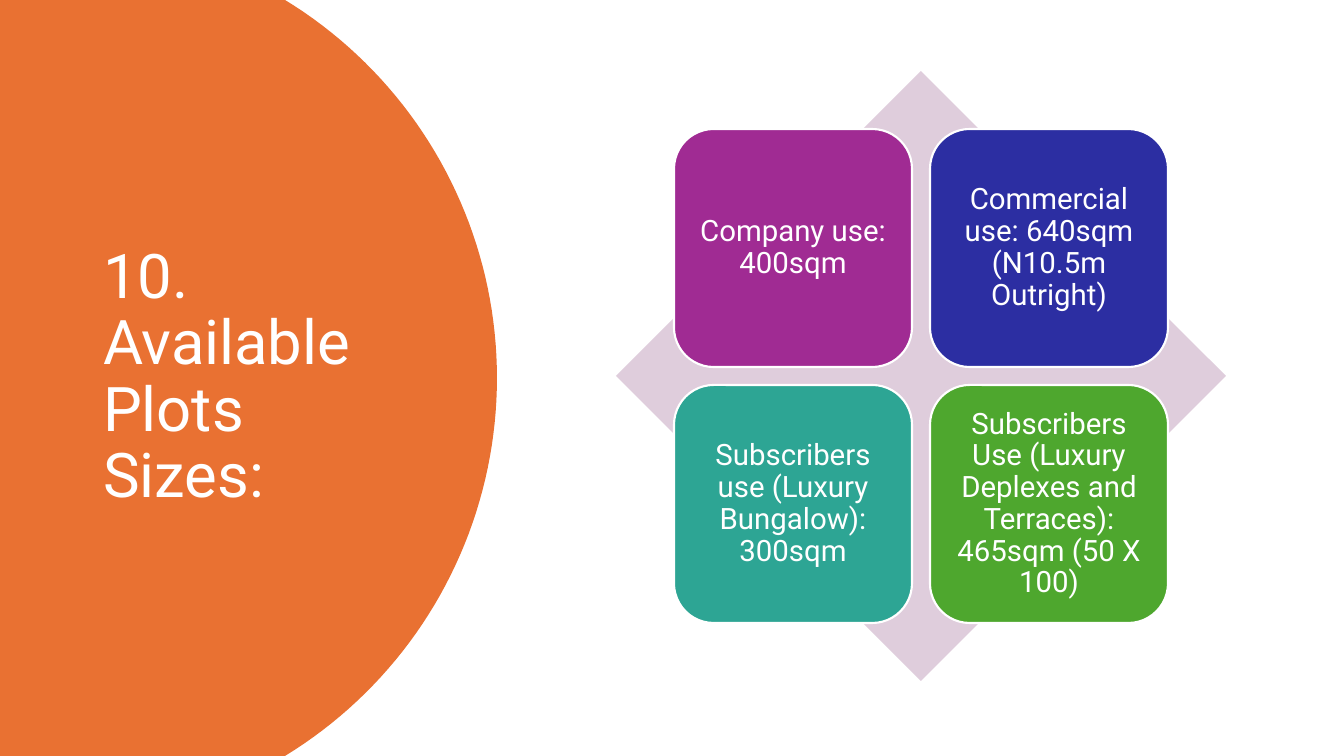
from math import asin, cos, sin

from pptx import Presentation
from pptx.dml.color import RGBColor
from pptx.enum.shapes import MSO_SHAPE
from pptx.enum.text import MSO_ANCHOR, MSO_AUTO_SIZE, PP_ALIGN
from pptx.util import Emu, Pt

WIDTH, HEIGHT = 1344, 756
TILE, GAP = 238, 18
CENTER_X, CENTER_Y = 921, 376
DIAMOND = 610
PLOTS = [
    ("Company use: 400sqm", "A02B93"),
    ("Commercial use: 640sqm (N10.5m Outright)", "2C2EA2"),
    ("Subscribers use (Luxury Bungalow): 300sqm", "2DA594"),
    ("Subscribers Use (Luxury Deplexes and Terraces): 465sqm (50 X 100)", "4EA72E"),
]


def px(n):
    return Emu(round(n * 914400 / 100.8))


def rgb(color):
    return RGBColor.from_string(color)


class Deck:
    font = "Roboto"
    white = "FFFFFF"

    def __init__(self):
        self.prs = Presentation()
        self.prs.slide_width, self.prs.slide_height = px(WIDTH), px(HEIGHT)
        self.s = self.prs.slides.add_slide(self.prs.slide_layouts[5])

    def paint(self, sp, fill, line=None):
        sp.shadow.inherit = False
        sp.fill.solid()
        sp.fill.fore_color.rgb = rgb(fill)
        if line:
            sp.line.color.rgb = rgb(line)
            sp.line.width = Pt(1.5)
        else:
            sp.line.fill.background()

    def add_text(self, sp, text, size, align):
        tf = sp.text_frame
        tf.word_wrap = True
        tf.auto_size = MSO_AUTO_SIZE.NONE
        tf.vertical_anchor = MSO_ANCHOR.MIDDLE
        p = tf.paragraphs[0]
        p.alignment = align
        p.line_spacing = 0.9
        r = p.add_run()
        r.text = text
        r.font.name = self.font
        r.font.size = Pt(size)
        r.font.color.rgb = rgb(self.white)

    def title(self, text, x, y, w, h):
        sp = self.s.shapes.title
        sp.left, sp.top, sp.width, sp.height = map(px, (x, y, w, h))
        self.add_text(sp, text, 44, PP_ALIGN.LEFT)

    def round_panel(self, center_x, radius, fill, steps=80):
        """Fill the left edge of the slide up to a circular arc, behind the title."""
        mid = HEIGHT / 2
        reach = asin(mid / radius)
        angles = [reach * (2 * i / steps - 1) for i in range(steps + 1)]
        arc = [(px(center_x + radius * cos(a)), px(mid + radius * sin(a))) for a in angles]
        builder = self.s.shapes.build_freeform(0, 0)
        builder.add_line_segments(arc + [(0, px(HEIGHT))], close=True)
        sp = builder.convert_to_shape()
        self.paint(sp, fill)
        self.s.shapes.title._element.addprevious(sp._element)

    def shape(self, parent, kind, x, y, size, fill, line=None):
        sp = parent.shapes.add_shape(kind, px(x), px(y), px(size), px(size))
        self.paint(sp, fill, line)
        return sp

    def tile(self, parent, text, x, y, fill):
        sp = self.shape(parent, MSO_SHAPE.ROUNDED_RECTANGLE, x, y, TILE, fill, self.white)
        tf = sp.text_frame
        tf.margin_left = tf.margin_right = tf.margin_top = tf.margin_bottom = px(9)
        self.add_text(sp, text, 21, PP_ALIGN.CENTER)

    def plot_matrix(self, plots):
        group = self.s.shapes.add_group_shape()
        self.shape(group, MSO_SHAPE.DIAMOND, CENTER_X - DIAMOND // 2,
                   CENTER_Y - DIAMOND // 2, DIAMOND, "DFCDDC")
        left, top = (c - TILE - GAP // 2 for c in (CENTER_X, CENTER_Y))
        for i, (text, fill) in enumerate(plots):
            row, col = divmod(i, 2)
            self.tile(group, text, left + col * (TILE + GAP), top + row * (TILE + GAP), fill)


def main():
    deck = Deck()
    deck.round_panel(54, 443, "E97132")
    deck.title("10. Available Plots Sizes:", 93, 71, 326, 614)
    deck.plot_matrix(PLOTS)
    deck.prs.save("out.pptx")


if __name__ == "__main__":
    main()
